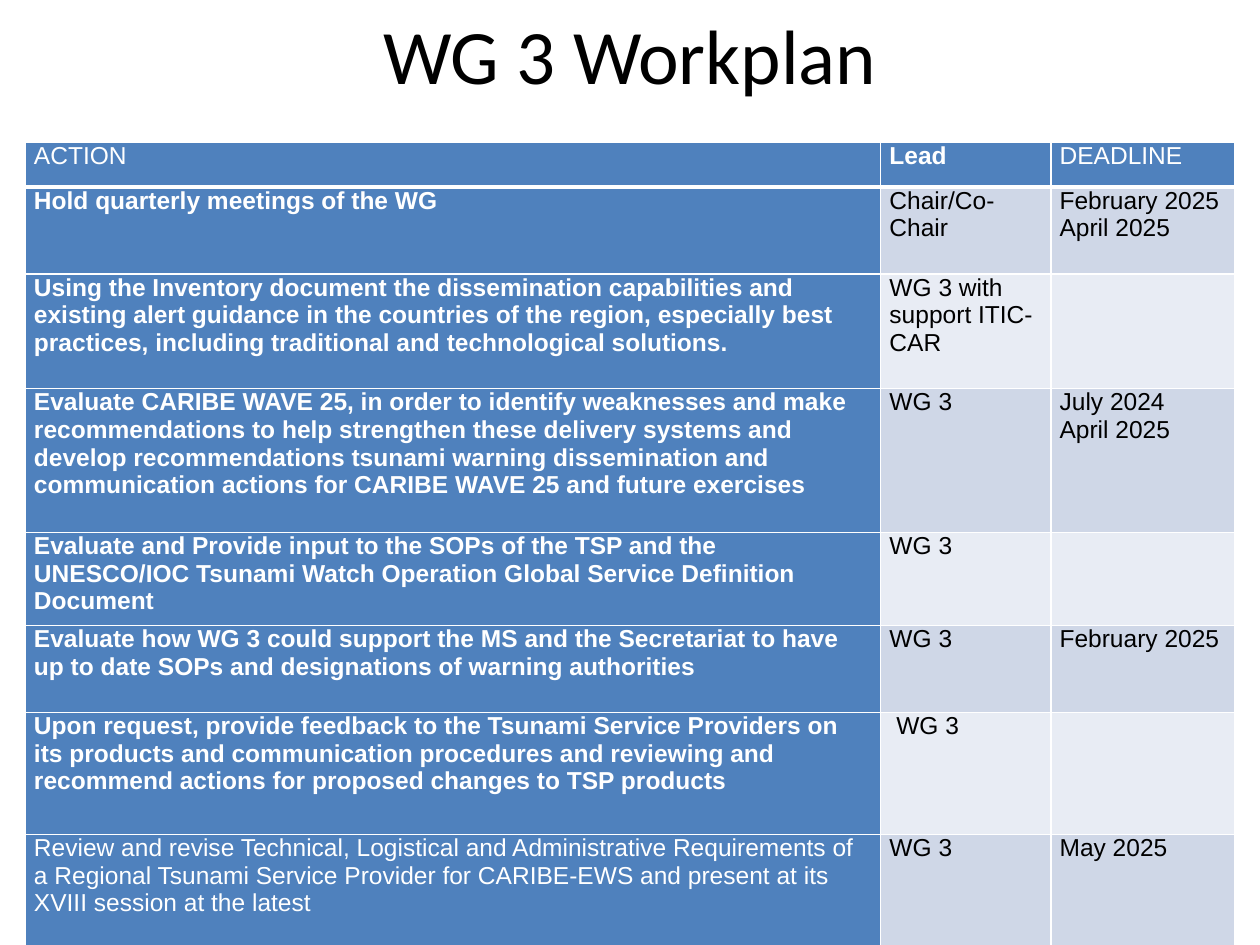
import pptx
import pptx.util
import pptx.dml.color
import pptx.enum.text
import pptx.oxml.ns
import lxml.etree

inch = pptx.util.Inches
wide, high = 10, 7.5
cols = [6.79, 1.35, 1.46]
tall = [0.36, 0.69, 0.91, 1.14, 0.74, 0.69, 0.97, 0.97]
blue, white, black = "4F81BD", "FFFFFF", "000000"
bands = ["E8ECF4", "CFD7E7"]
plan = [
    ("ACTION", "Lead", "DEADLINE"),
    ("Hold quarterly meetings of the WG", "Chair/Co-Chair", "February 2025\nApril 2025"),
    ("Using the Inventory document the dissemination capabilities and existing alert guidance "
     "in the countries of the region, especially best practices, including traditional and "
     "technological solutions.", "WG 3 with support ITIC-CAR", ""),
    ("Evaluate CARIBE WAVE 25, in order to identify weaknesses and make recommendations to help "
     "strengthen these delivery systems and develop recommendations tsunami warning dissemination "
     "and communication actions for CARIBE WAVE 25 and future exercises",
     "WG 3", "July 2024\nApril 2025"),
    ("Evaluate and Provide input to the SOPs of the TSP and the UNESCO/IOC Tsunami Watch Operation "
     "Global Service Definition Document", "WG 3", ""),
    ("Evaluate how WG 3 could support the MS and the Secretariat to have up to date SOPs and "
     "designations of warning authorities", "WG 3", "February 2025"),
    ("Upon request, provide feedback to the Tsunami Service Providers on its products and "
     "communication procedures and reviewing and recommend actions for proposed changes to TSP "
     "products", " WG 3", ""),
    ("Review and revise Technical, Logistical and Administrative Requirements of a Regional Tsunami "
     "Service Provider for CARIBE-EWS and present at its XVIII session at the latest",
     "WG 3", "May 2025"),
]
plain = [(0, 0), (0, 2), (len(plan) - 1, 0)]


def style(frame, face, size, tint, bold):
    for para in frame.paragraphs:
        for run in para.runs:
            run.font.name = face
            run.font.size = pptx.util.Pt(size)
            run.font.bold = bold
            run.font.color.rgb = pptx.dml.color.RGBColor.from_string(tint)


def edge(cell, side, width):
    name = pptx.oxml.ns.qn
    line = lxml.etree.SubElement(cell._tc.get_or_add_tcPr(), name("a:ln" + side))
    line.set("w", str(pptx.util.Pt(width)))
    fill = lxml.etree.SubElement(line, name("a:solidFill"))
    lxml.etree.SubElement(fill, name("a:srgbClr")).set("val", white)


deck = pptx.Presentation()
deck.slide_width, deck.slide_height = inch(wide), inch(high)
slide = deck.slides.add_slide(deck.slide_layouts[6])

title = slide.shapes.add_textbox(
    inch(0.05 * wide), inch(0.01), inch(0.9 * wide), inch(0.84)).text_frame
title.word_wrap = True
title.vertical_anchor = pptx.enum.text.MSO_ANCHOR.MIDDLE
title.text = "WG 3 Workplan"
title.paragraphs[0].alignment = pptx.enum.text.PP_ALIGN.CENTER
style(title, "Calibri", 44, black, False)

table = slide.shapes.add_table(
    len(tall), len(cols), inch(0.02 * wide), inch(0.15 * high),
    inch(sum(cols)), inch(sum(tall))).table
for col, size in zip(table.columns, cols):
    col.width = inch(size)
for row, size in zip(table.rows, tall):
    row.height = inch(size)

for r, words in enumerate(plan):
    for c, text in enumerate(words):
        cell = table.cell(r, c)
        head = r == 0 or c == 0
        for side in "LRTB":
            thick = (r == 0 and side == "B") or (r == 1 and side == "T")
            edge(cell, side, 3 if thick else 1)
        cell.fill.solid()
        shade = blue if head else bands[r % 2]
        cell.fill.fore_color.rgb = pptx.dml.color.RGBColor.from_string(shade)
        cell.margin_left = cell.margin_right = inch(0.07)
        cell.margin_top = cell.margin_bottom = 0
        if text:
            cell.text_frame.text = text
            style(cell.text_frame, "Arial", 14, white if head else black,
                  head and (r, c) not in plain)

deck.save("out.pptx")
